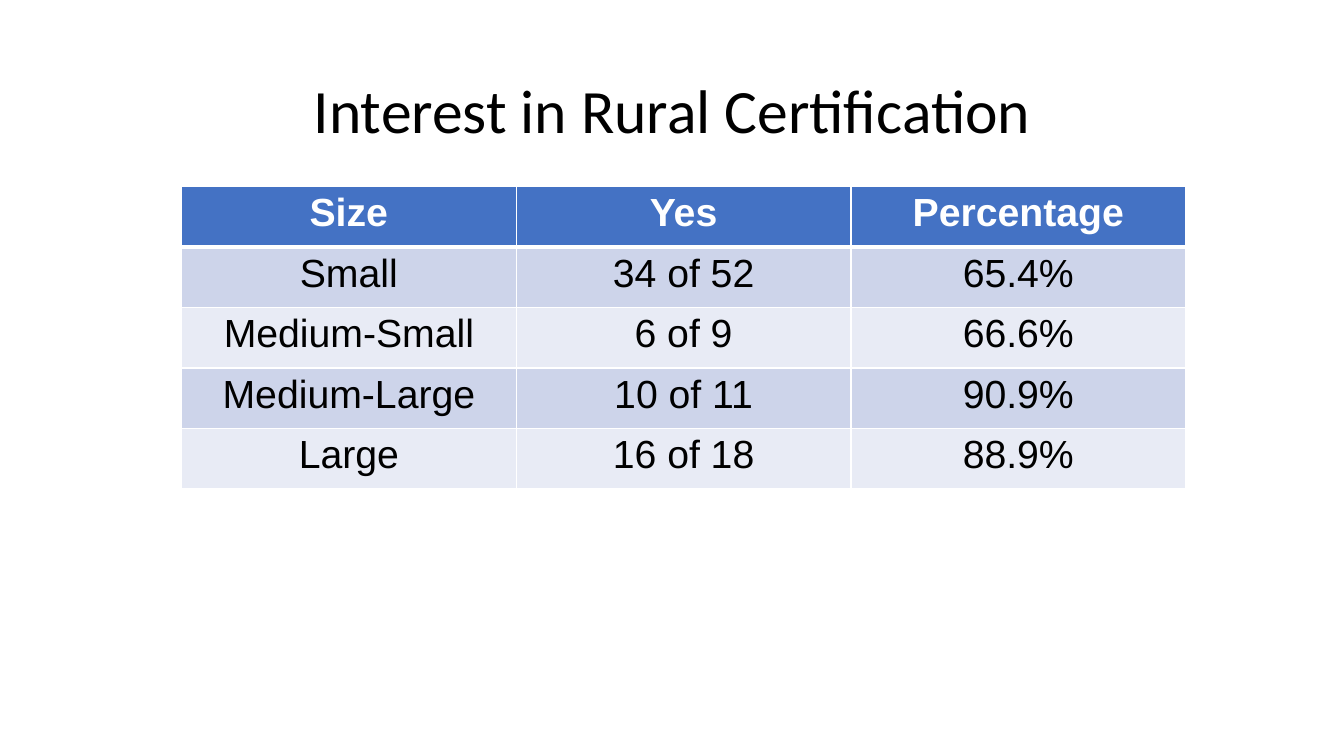
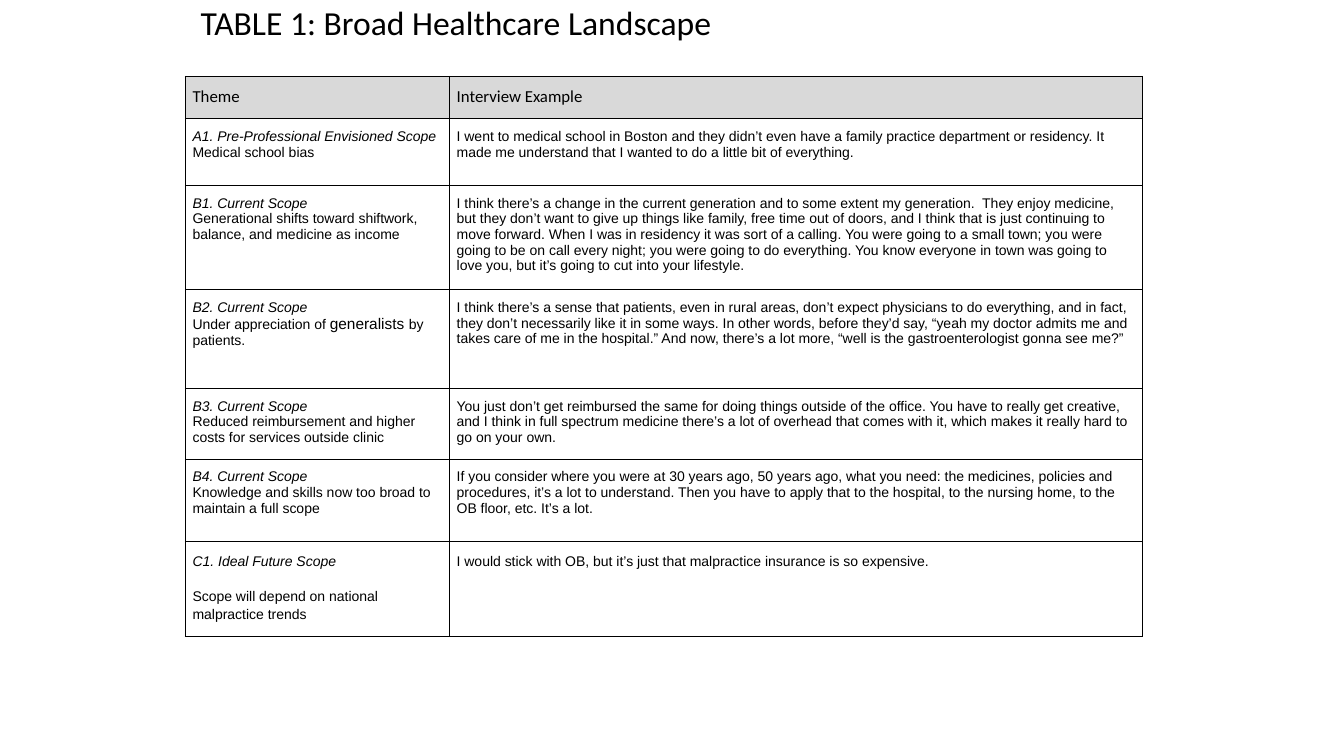
from dataclasses import dataclass

from lxml.etree import SubElement
from pptx import Presentation
from pptx.dml.color import RGBColor
from pptx.enum.text import MSO_ANCHOR, PP_ALIGN
from pptx.oxml.ns import qn
from pptx.util import Inches, Pt


@dataclass(frozen=True)
class Theme:
    black: str = "000000"
    white: str = "FFFFFF"
    blue: str = "4472C4"
    bands: tuple = ("CDD4EA", "E8EBF5")
    grey: str = "D9D9D9"
    heading_font: str = "Calibri"
    body_font: str = "Arial"
    title: int = 44
    caption: int = 24
    results: int = 28
    theme_header: int = 12
    quote: int = 10
    emphasis: int = 11


THEME = Theme()

INTEREST_TITLE = "Interest in Rural Certification"
INTEREST_ROWS = [
    ("Size", "Yes", "Percentage"),
    ("Small", "34 of 52", "65.4%"),
    ("Medium-Small", "6 of 9", "66.6%"),
    ("Medium-Large", "10 of 11", "90.9%"),
    ("Large", "16 of 18", "88.9%"),
]

LANDSCAPE_TITLE = "TABLE 1: Broad Healthcare Landscape"
LANDSCAPE_HEADER = ("Theme", "Interview Example")
# Each row: height in inches, scope, runs of (text, size), interview quote
LANDSCAPE_ROWS = [
    (0.66, "A1. Pre-Professional Envisioned Scope",
     [("Medical school bias", THEME.quote)],
     "I went to medical school in Boston and they didn’t even have a family practice "
     "department or residency. It made me understand that I wanted to do a little bit "
     "of everything."),
    (0.98, "B1. Current Scope",
     [("Generational shifts toward shiftwork, balance, and medicine as income", THEME.quote)],
     "I think there’s a change in the current generation and to some extent my "
     "generation.  They enjoy medicine, but they don’t want to give up things like "
     "family, free time out of doors, and I think that is just continuing to move "
     "forward. When I was in residency it was sort of a calling. You were going to a "
     "small town; you were going to be on call every night; you were going to do "
     "everything. You know everyone in town was going to love you, but it’s going to "
     "cut into your lifestyle."),
    (0.98, "B2. Current Scope",
     [("Under appreciation of ", THEME.quote), ("generalists ", THEME.emphasis),
      ("by patients.", THEME.quote)],
     "I think there’s a sense that patients, even in rural areas, don’t expect "
     "physicians to do everything, and in fact, they don’t necessarily like it in some "
     "ways. In other words, before they’d say, “yeah my doctor admits me and takes care "
     "of me in the hospital.” And now, there’s a lot more, “well is the "
     "gastroenterologist gonna see me?”"),
    (0.66, "B3. Current Scope",
     [("Reduced reimbursement and higher costs for services outside clinic", THEME.quote)],
     "You just don’t get reimbursed the same for doing things outside of the office. "
     "You have to really get creative, and I think in full spectrum medicine there’s a "
     "lot of overhead that comes with it, which makes it really hard to go on your own."),
    (0.82, "B4. Current Scope",
     [("Knowledge and skills now too broad to maintain a full scope", THEME.quote)],
     "If you consider where you were at 30 years ago, 50 years ago, what you need: the "
     "medicines, policies and procedures, it’s a lot to understand. Then you have to "
     "apply that to the hospital, to the nursing home, to the OB floor, etc. It’s a lot."),
    (0.9, "C1. Ideal Future Scope",
     [("Scope will depend on national malpractice trends", THEME.quote)],
     "I would stick with OB, but it’s just that malpractice insurance is so expensive."),
]


def style_font(font, size, name, color=THEME.black, bold=False, italic=False):
    font.size, font.name = Pt(size), name
    font.bold, font.italic = bold, italic
    font.color.rgb = RGBColor.from_string(color)


def write(paragraph, runs, name, align=PP_ALIGN.LEFT, **style):
    """Fill a paragraph with (text, size) runs."""
    paragraph.alignment = align
    for text, size in runs:
        span = paragraph.add_run()
        span.text = text
        style_font(span.font, size, name, **style)


def add_title(page, text, place, size, align, anchor, inset):
    box = page.shapes.add_textbox(*map(Inches, place))
    frame = box.text_frame
    frame.word_wrap = True
    frame.vertical_anchor = anchor
    frame.margin_top = frame.margin_bottom = Inches(inset)
    para = frame.paragraphs[0]
    write(para, [(text, size)], THEME.heading_font, align)
    return para


def add_grid(page, left, top, widths, heights):
    table = page.shapes.add_table(
        len(heights), len(widths), Inches(left), Inches(top),
        Inches(sum(widths)), Inches(sum(heights))).table
    table.horz_banding = False
    for column, width in zip(table.columns, widths):
        column.width = Inches(width)
    for row, height in zip(table.rows, heights):
        row.height = Inches(height)
    return table


def frame_cell(cell, border, fill=None, top=1, bottom=1, inset=(0.1, 0.05)):
    """Set a cell's borders (points), fill and (side, vertical) insets."""
    properties = cell._tc.get_or_add_tcPr()
    for side, width in (("L", 1), ("R", 1), ("T", top), ("B", bottom)):
        line = SubElement(properties, qn(f"a:ln{side}"), w=str(Pt(width)))
        solid = SubElement(line, qn("a:solidFill"))
        SubElement(solid, qn("a:srgbClr"), val=border)
    if fill:
        cell.fill.solid()
        cell.fill.fore_color.rgb = RGBColor.from_string(fill)
    else:
        cell.fill.background()
    cell.margin_left = cell.margin_right = Inches(inset[0])
    cell.margin_top = cell.margin_bottom = Inches(inset[1])


def build_interest(page):
    title = add_title(page, INTEREST_TITLE, (0.92, 0.4, 11.5, 1.45), THEME.title,
                      PP_ALIGN.CENTER, MSO_ANCHOR.MIDDLE, 0.05)
    title.line_spacing = 0.9
    table = add_grid(page, 1.8, 1.85, [3.32] * 3, [0.6] * len(INTEREST_ROWS))
    for r, texts in enumerate(INTEREST_ROWS):
        header = r == 0
        fill = THEME.blue if header else THEME.bands[(r - 1) % 2]
        for c, text in enumerate(texts):
            cell = table.cell(r, c)
            frame_cell(cell, THEME.white, fill, top=3 if r == 1 else 1,
                       bottom=3 if header else 1)
            write(cell.text_frame.paragraphs[0], [(text, THEME.results)],
                  THEME.body_font, PP_ALIGN.CENTER, bold=header,
                  color=THEME.white if header else THEME.black)


def build_landscape(page):
    heights = [0.42] + [row[0] for row in LANDSCAPE_ROWS]
    table = add_grid(page, 1.84, 0.76, [2.62, 6.87], heights)
    for r in range(len(heights)):
        for c in range(len(LANDSCAPE_HEADER)):
            frame_cell(table.cell(r, c), THEME.black,
                       THEME.grey if r == 0 else None, inset=(0.07, 0.1))
    for c, text in enumerate(LANDSCAPE_HEADER):
        write(table.cell(0, c).text_frame.paragraphs[0],
              [(text, THEME.theme_header)], THEME.heading_font)
    for r, (_, scope, finding, quote) in enumerate(LANDSCAPE_ROWS, start=1):
        theme_frame = table.cell(r, 0).text_frame
        scope_para, finding_para = theme_frame.paragraphs[0], theme_frame.add_paragraph()
        quote_para = table.cell(r, 1).text_frame.paragraphs[0]
        write(scope_para, [(scope, THEME.quote)], THEME.body_font, italic=True)
        write(finding_para, finding, THEME.body_font)
        write(quote_para, [(quote, THEME.quote)], THEME.body_font)
    # The closing row is set more loosely than the others
    for para in (scope_para, finding_para, quote_para):
        para.line_spacing = 1.15
    finding_para.space_before = Pt(12)
    add_title(page, LANDSCAPE_TITLE, (1.89, -0.08, 8.02, 0.94), THEME.caption,
              PP_ALIGN.LEFT, MSO_ANCHOR.TOP, 0.1)


def main():
    deck = Presentation()
    deck.slide_width, deck.slide_height = Inches(13.33), Inches(7.5)
    blank = deck.slide_layouts[6]
    for build in (build_interest, build_landscape):
        build(deck.slides.add_slide(blank))
    deck.save("out.pptx")


if __name__ == "__main__":
    main()
